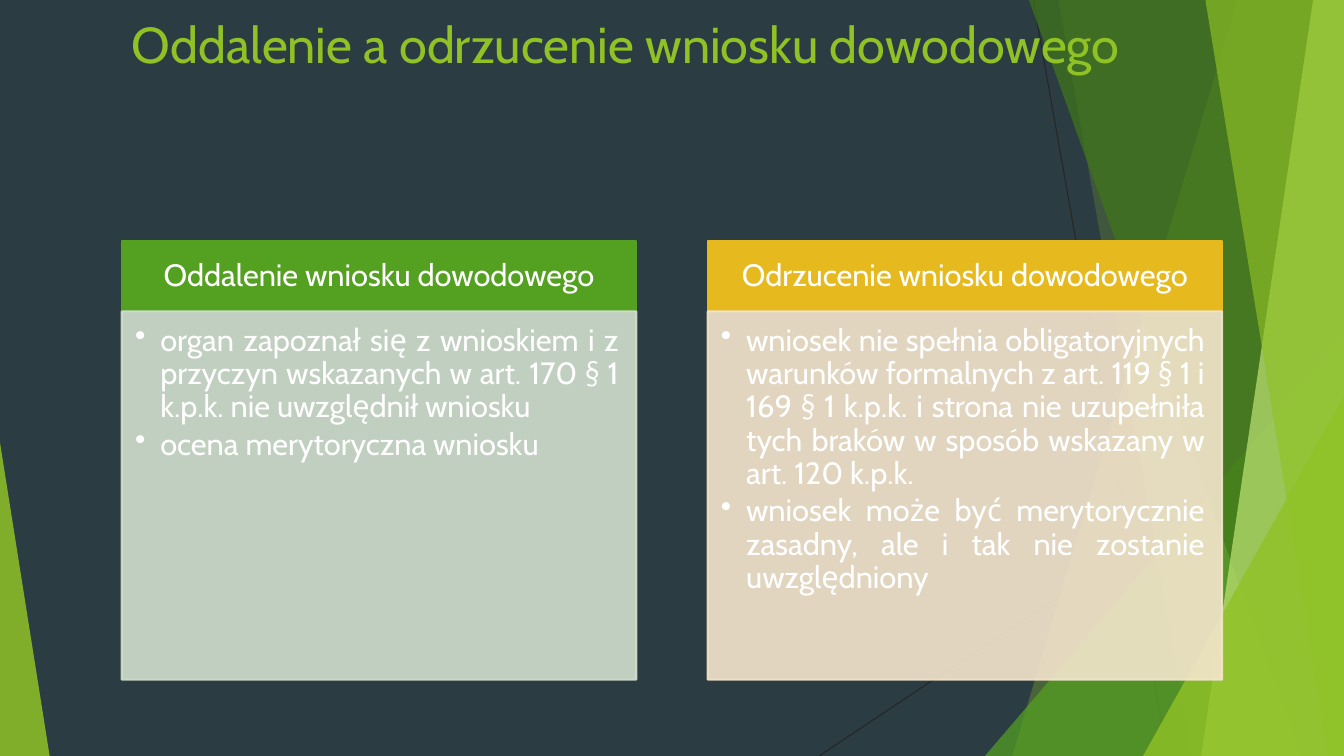
import pptx
import pptx.util
import pptx.dml.color
import pptx.enum.shapes
import pptx.enum.text
import pptx.oxml
import pptx.oxml.ns

Pt = pptx.util.Pt
RGBColor = pptx.dml.color.RGBColor
Align = pptx.enum.text.PP_ALIGN
Anchor = pptx.enum.text.MSO_ANCHOR
Shape = pptx.enum.shapes.MSO_SHAPE
qn = pptx.oxml.ns.qn

SLATE = RGBColor(0x2C, 0x3C, 0x43)
CHARCOAL = RGBColor(0x26, 0x26, 0x26)
LIME = RGBColor(0x90, 0xC2, 0x26)
GREEN = RGBColor(0x54, 0xA0, 0x21)
FOREST = RGBColor(0x3F, 0x78, 0x19)
PALE_LIME = RGBColor(0xC0, 0xE4, 0x74)
PALE_GREEN = RGBColor(0xD1, 0xDF, 0xCD)
GOLD = RGBColor(0xE6, 0xB9, 0x1E)
PALE_GOLD = RGBColor(0xF5, 0xE6, 0xCD)
WHITE = RGBColor(0xFF, 0xFF, 0xFF)

FONT = "Cabin"
WIDTH, HEIGHT = 960, 540

TITLE = "Oddalenie a odrzucenie wniosku dowodowego"
PANELS = [
    ("Oddalenie wniosku dowodowego", GREEN, PALE_GREEN, [
        "organ zapoznał się z wnioskiem i z przyczyn wskazanych w art. 170 § 1 k.p.k. nie uwzględnił wniosku",
        "ocena merytoryczna wniosku",
    ]),
    ("Odrzucenie wniosku dowodowego", GOLD, PALE_GOLD, [
        "wniosek nie spełnia obligatoryjnych warunków formalnych z art. 119 § 1 i 169 § 1 k.p.k. "
        "i strona nie uzupełniła tych braków w sposób wskazany w art. 120 k.p.k.",
        "wniosek może być merytorycznie zasadny, ale i tak nie zostanie uwzględniony",
    ]),
]

RAYS = [(738, 0, 834, 540), (960, 290, 585, 540)]
FACETS = [
    ("band", 884, 723, LIME, 30),
    ("band", 756, 852, LIME, 20),
    ("triangle", (703.5, 240, 256.5), 1, GREEN, 72),
    ("band", 735, 929.5, FOREST, 70),
    ("band", 938, 858, PALE_LIME, 70),
    ("band", 861, 949, LIME, 65),
    ("triangle", (816.5, 283, 143.5), 1, LIME, 80),
    ("triangle", (0, 316, 35.5), 0, LIME, 85),
]

PANEL_LEFT, PANEL_TOP, PANEL_WIDTH, PANEL_STEP = 87, 172.5, 367.5, 418.5
HEAD_HEIGHT, BODY_HEIGHT = 50, 263


def set_alpha(color_parent, percent):
    for color in color_parent.iter(qn("a:srgbClr")):
        alpha = pptx.oxml.parse_xml(
            f'<a:alpha xmlns:a="{pptx.oxml.ns.nsdecls("a").split(chr(34))[1]}" val="{percent * 1000}"/>')
        color.append(alpha)


def paint(shape, color, alpha=100, outline=False):
    shape.shadow.inherit = False
    shape.fill.solid()
    shape.fill.fore_color.rgb = color
    if outline:
        shape.line.color.rgb = color
        shape.line.width = Pt(1.5)
    else:
        shape.line.fill.background()
    if alpha < 100:
        set_alpha(shape.element.spPr, alpha)


def write(frame, texts, size=22, color=WHITE, align=Align.LEFT, anchor=Anchor.TOP,
          insets=(7.2, 3.6, 7.2, 3.6), spacing=None, after=0, bullet=None):
    frame.word_wrap = True
    frame.auto_size = pptx.enum.text.MSO_AUTO_SIZE.NONE
    frame.vertical_anchor = anchor
    frame.margin_left, frame.margin_top, frame.margin_right, frame.margin_bottom = map(Pt, insets)
    for index, text in enumerate(texts):
        para = frame.paragraphs[0] if index == 0 else frame.add_paragraph()
        para.alignment = align
        para.line_spacing = spacing
        para.space_before = Pt(0)
        para.space_after = Pt(after)
        if bullet:
            properties = para._p.get_or_add_pPr()
            properties.set("marL", str(Pt(18)))
            properties.set("indent", str(Pt(-18)))
            mark = properties.makeelement(qn("a:buChar"), {"char": bullet})
            properties.append(mark)
        span = para.add_run()
        span.text = text
        span.font.name = FONT
        span.font.size = Pt(size)
        span.font.color.rgb = color


def add_ray(page, ends):
    ray = page.shapes.add_connector(pptx.enum.shapes.MSO_CONNECTOR.STRAIGHT, *map(Pt, ends))
    ray.line.color.rgb = CHARCOAL
    ray.line.width = Pt(0.75)
    properties = ray.element.spPr
    properties.append(properties.makeelement(qn("a:effectLst"), {}))


def add_band(page, top_x, bottom_x):
    builder = page.shapes.build_freeform(Pt(top_x), Pt(0))
    corners = [(WIDTH, 0), (WIDTH, HEIGHT), (bottom_x, HEIGHT)]
    builder.add_line_segments([(Pt(x), Pt(y)) for x, y in corners], close=True)
    return builder.convert_to_shape()


def add_triangle(page, place, apex):
    left, top, width = place
    triangle = page.shapes.add_shape(
        Shape.ISOSCELES_TRIANGLE, Pt(left), Pt(top), Pt(width), Pt(HEIGHT - top))
    triangle.adjustments[0] = apex
    return triangle


def add_box(page, left, top, height, color, alpha=100):
    box = page.shapes.add_shape(Shape.RECTANGLE, Pt(left), Pt(top), Pt(PANEL_WIDTH), Pt(height))
    paint(box, color, alpha, outline=True)
    return box.text_frame


def main():
    deck = pptx.Presentation()
    deck.slide_width, deck.slide_height = Pt(WIDTH), Pt(HEIGHT)
    page = deck.slides.add_slide(deck.slide_layouts[5])
    page.background.fill.solid()
    page.background.fill.fore_color.rgb = SLATE

    for ends in RAYS:
        add_ray(page, ends)
    makers = {"band": add_band, "triangle": add_triangle}
    for kind, first, second, color, alpha in FACETS:
        paint(makers[kind](page, first, second), color, alpha)

    title = page.shapes.title
    title.left, title.top, title.width, title.height = Pt(87), Pt(6), Pt(786), Pt(86)
    write(title.text_frame, [TITLE], size=36, color=LIME)
    title.element.getparent().append(title.element)

    for index, (heading, strong, pale, points) in enumerate(PANELS):
        left = PANEL_LEFT + index * PANEL_STEP
        head = add_box(page, left, PANEL_TOP, HEAD_HEIGHT, strong)
        write(head, [heading], align=Align.CENTER, anchor=Anchor.MIDDLE,
              insets=(12, 7, 12, 7), spacing=0.9)
        body = add_box(page, left, PANEL_TOP + HEAD_HEIGHT, BODY_HEIGHT, pale, alpha=90)
        write(body, points, align=Align.JUSTIFY, insets=(9.5, 9.5, 12.5, 14),
              spacing=0.9, after=3, bullet="•")

    deck.save("out.pptx")


if __name__ == "__main__":
    main()
